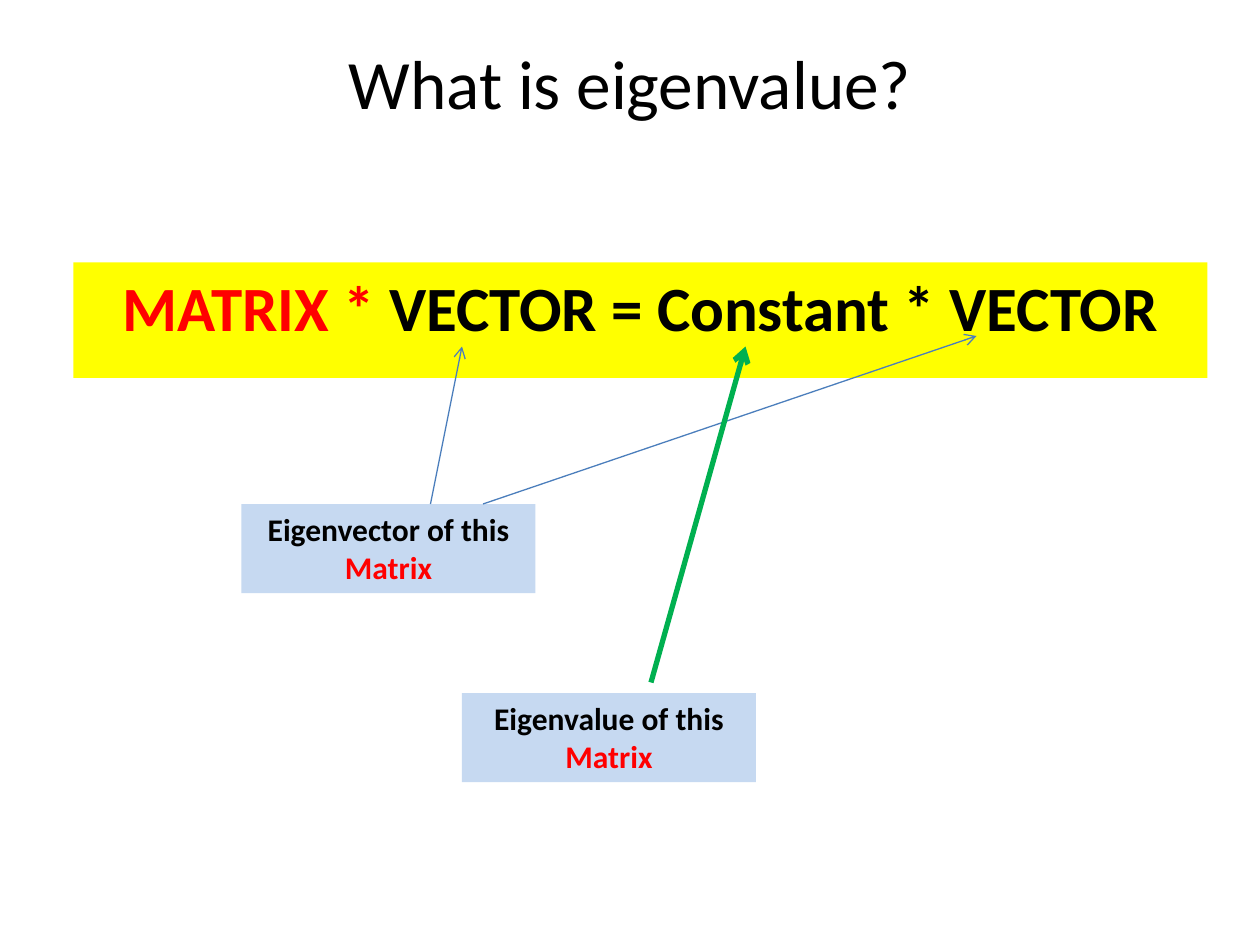
import pptx
import pptx.util
import pptx.dml.color
import pptx.enum.shapes
import pptx.enum.text
import pptx.oxml.ns
import lxml.etree

Pt = pptx.util.Pt
BLACK, RED = "000000", "FF0000"


def rgb(hex_color):
    return pptx.dml.color.RGBColor.from_string(hex_color)


def write_runs(frame, runs, size, bold):
    """Fill the frame with one centred paragraph of (text, colour) runs."""
    frame.word_wrap = True
    paragraph = frame.paragraphs[0]
    paragraph.alignment = pptx.enum.text.PP_ALIGN.CENTER
    for text, color in runs:
        run = paragraph.add_run()
        run.text = text
        run.font.name = "Calibri"
        run.font.size = Pt(size)
        run.font.bold = bold
        run.font.color.rgb = rgb(color)


prs = pptx.Presentation()
prs.slide_width, prs.slide_height = Pt(720), Pt(540)
slide = prs.slides.add_slide(prs.slide_layouts[5])

title = slide.shapes.title
title.left, title.top, title.width, title.height = Pt(36), Pt(21.6), Pt(648), Pt(50.4)
title.text_frame.vertical_anchor = pptx.enum.text.MSO_ANCHOR.MIDDLE
write_runs(title.text_frame, [("What is eigenvalue?", BLACK)], 39.6, False)

# Equation band and the two labels: left, top, width, height, fill, size, runs
boxes = [
    (42, 150, 648, 66, "FFFF00", 36,
     [("MATRIX * ", RED), ("VECTOR = Constant * VECTOR", BLACK)]),
    (138, 288, 168, 51, "C6D9F1", 18,
     [("Eigenvector of this ", BLACK), ("Matrix", RED)]),
    (264, 396, 168, 51, "C6D9F1", 18,
     [("Eigenvalue of this ", BLACK), ("Matrix", RED)]),
]
for left, top, width, height, fill, size, runs in boxes:
    box = slide.shapes.add_textbox(Pt(left), Pt(top), Pt(width), Pt(height))
    box.fill.solid()
    box.fill.fore_color.rgb = rgb(fill)
    write_runs(box.text_frame, runs, size, True)

# Arrows from the labels to the equation: start, end, colour, width
arrows = [
    ((246, 288), (264, 198), "4B7EBC", 0.75),
    ((276, 288), (558, 192), "4B7EBC", 0.75),
    ((372, 390), (426, 198), "00B050", 3),
]
for start, end, color, width in arrows:
    arrow = slide.shapes.add_connector(
        pptx.enum.shapes.MSO_CONNECTOR.STRAIGHT, *map(Pt, start + end))
    arrow.line.color.rgb = rgb(color)
    arrow.line.width = Pt(width)
    properties = arrow.element.spPr
    line = properties.find(pptx.oxml.ns.qn("a:ln"))
    lxml.etree.SubElement(line, pptx.oxml.ns.qn("a:tailEnd"), type="arrow")
    lxml.etree.SubElement(properties, pptx.oxml.ns.qn("a:effectLst"))

prs.save("out.pptx")
